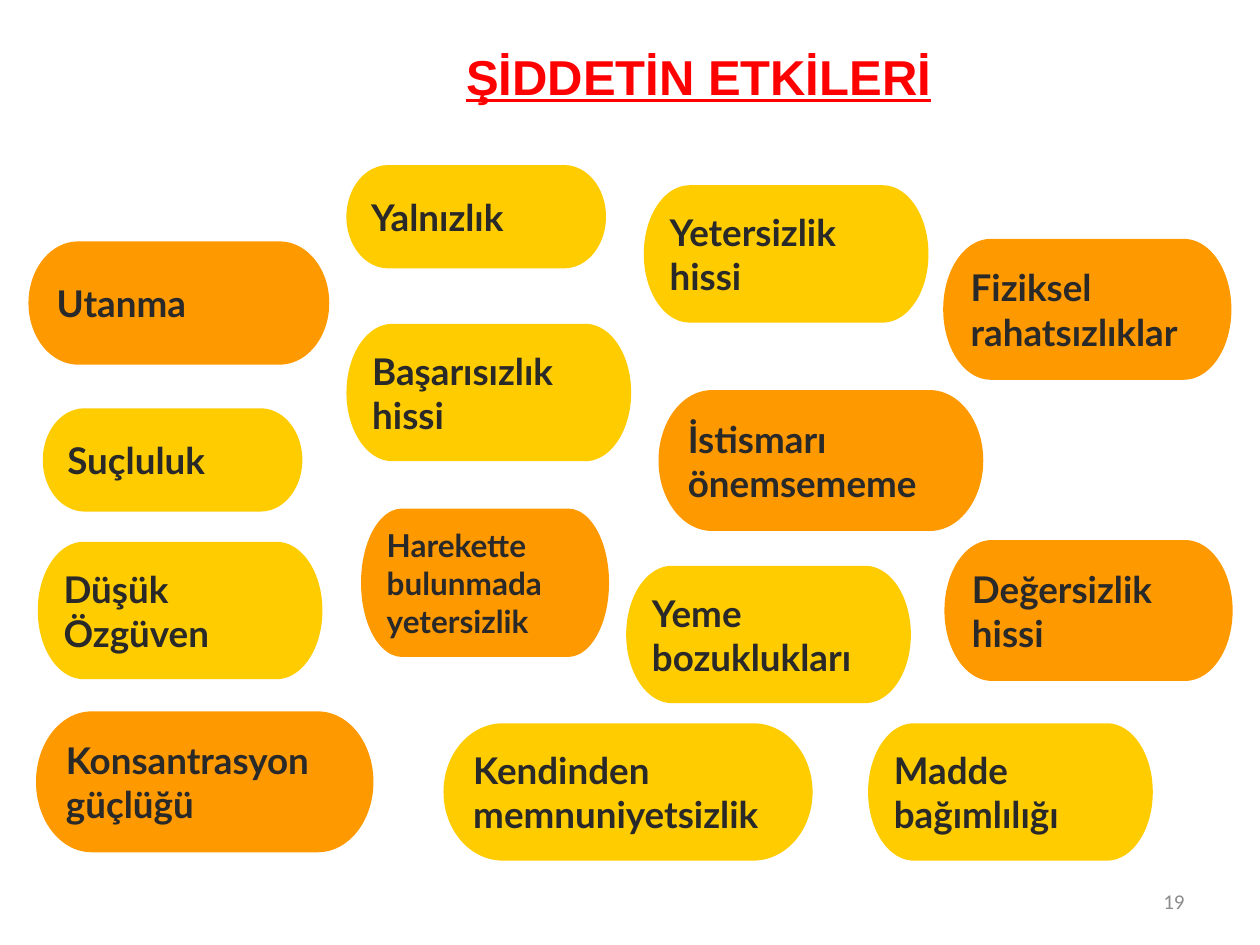
import pptx
import pptx.util
import pptx.dml.color
import pptx.enum.shapes
import pptx.enum.text

Inches = pptx.util.Inches
Pt = pptx.util.Pt
RGBColor = pptx.dml.color.RGBColor
ALIGN = pptx.enum.text.PP_ALIGN
MIDDLE = pptx.enum.text.MSO_ANCHOR.MIDDLE

ORANGE = RGBColor(0xFF, 0x99, 0x00)
YELLOW = RGBColor(0xFF, 0xCC, 0x00)
DARK = RGBColor(0x29, 0x29, 0x29)
RED = RGBColor(0xFF, 0x00, 0x00)
GRAY = RGBColor(0x8C, 0x8C, 0x8C)

SMALL = (2.06, 0.82)
WIDE = (2.26, 1.09)

EFFECTS = [
    ("Utanma", 0.24, 1.93, (2.36, 0.95), ORANGE),
    ("Suçluluk", 0.34, 3.24, SMALL, YELLOW),
    ("Yalnızlık", 2.75, 1.31, SMALL, YELLOW),
    ("Başarısızlık hissi", 2.75, 2.57, WIDE, YELLOW),
    ("Yetersizlik hissi", 5.11, 1.47, WIDE, YELLOW),
    ("Yeme bozuklukları", 4.97, 4.49, WIDE, YELLOW),
    ("Düşük Özgüven", 0.3, 4.3, WIDE, YELLOW),
    ("Harekette bulunmada yetersizlik", 2.88, 4.05, (1.94, 1.15), ORANGE, 18),
    ("Madde bağımlılığı", 6.89, 5.74, WIDE, YELLOW),
    ("Kendinden memnuniyetsizlik", 3.52, 5.74, (2.93, 1.09), YELLOW),
    ("Konsantrasyon güçlüğü", 0.3, 5.66, (2.65, 1.09), ORANGE),
    ("Değersizlik\nhissi", 7.51, 4.3, WIDE, ORANGE),
    ("İstismarı önemsememe", 5.24, 3.11, (2.55, 1.09), ORANGE),
    ("Fiziksel rahatsızlıklar", 7.5, 1.91, WIDE, ORANGE),
]


def write(frame, text, face, size, color, align, bold=False):
    frame.text = text
    for para in frame.paragraphs:
        para.alignment = align
        font = para.font
        font.name = face
        font.size = Pt(size)
        font.bold = bold
        font.color.rgb = color


def add_effect(slide, text, left, top, size, color, points=21):
    width, height = size
    shape = slide.shapes.add_shape(
        pptx.enum.shapes.MSO_SHAPE.FLOWCHART_TERMINATOR,
        Inches(left), Inches(top), Inches(width), Inches(height))
    shape.shadow.inherit = False
    shape.fill.solid()
    shape.fill.fore_color.rgb = color
    if color == ORANGE:
        shape.line.color.rgb = color
        shape.line.width = Pt(2)
    else:
        shape.line.fill.background()
    frame = shape.text_frame
    frame.word_wrap = True
    frame.vertical_anchor = MIDDLE
    write(frame, text, "Lato", points, DARK, ALIGN.LEFT, True)


def add_title(slide):
    box = slide.shapes.add_textbox(
        Inches(3.58), Inches(0.32), Inches(3.93), Inches(0.57))
    frame = box.text_frame
    frame.word_wrap = False
    frame.auto_size = pptx.enum.text.MSO_AUTO_SIZE.SHAPE_TO_FIT_TEXT
    write(frame, "ŞİDDETİN ETKİLERİ", "Arial", 28, RED, ALIGN.CENTER, True)
    frame.paragraphs[0].font.underline = True


def add_number(slide):
    box = slide.shapes.add_textbox(
        Inches(7.17), Inches(6.95), Inches(2.33), Inches(0.4))
    frame = box.text_frame
    frame.word_wrap = True
    frame.vertical_anchor = MIDDLE
    write(frame, "19", "Calibri", 12, GRAY, ALIGN.RIGHT)


def main():
    deck = pptx.Presentation()
    deck.slide_width = Inches(10)
    deck.slide_height = Inches(7.5)
    slide = deck.slides.add_slide(deck.slide_layouts[6])
    for effect in EFFECTS:
        add_effect(slide, *effect)
    add_title(slide)
    add_number(slide)
    deck.save("out.pptx")


if __name__ == "__main__":
    main()
